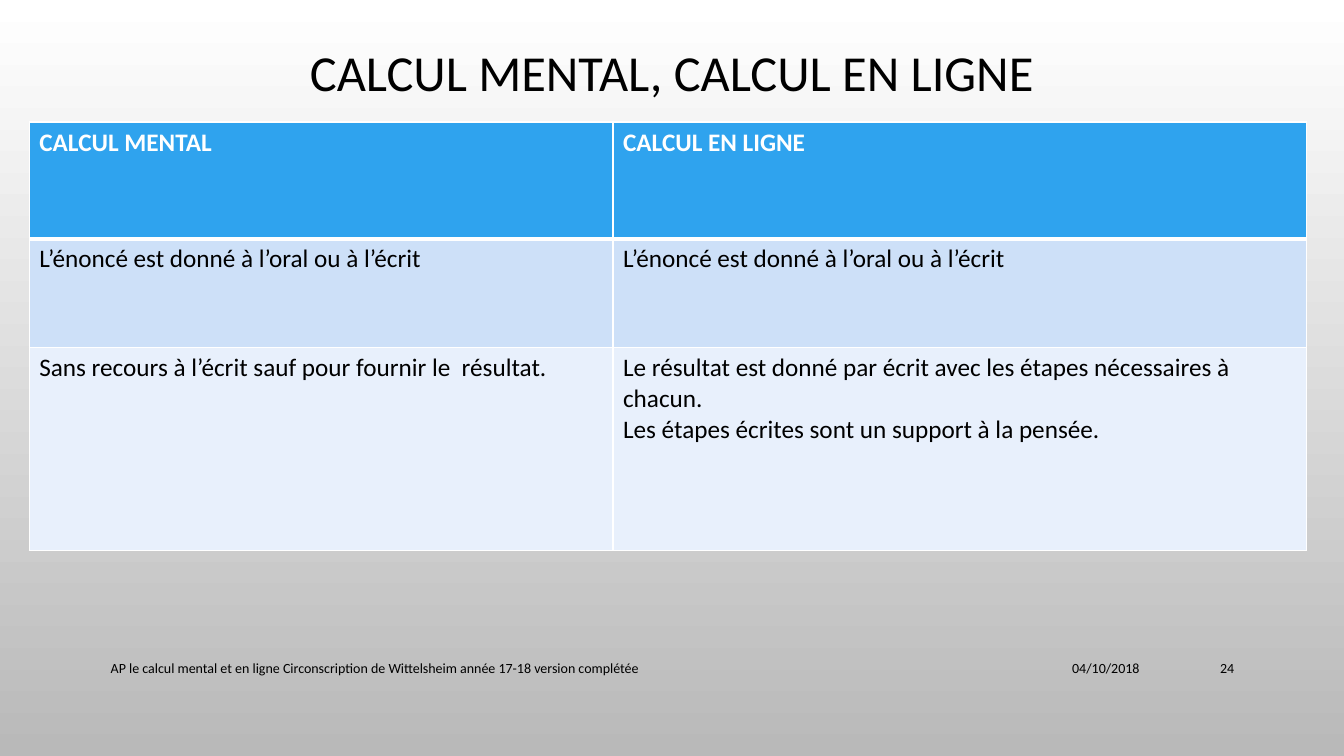
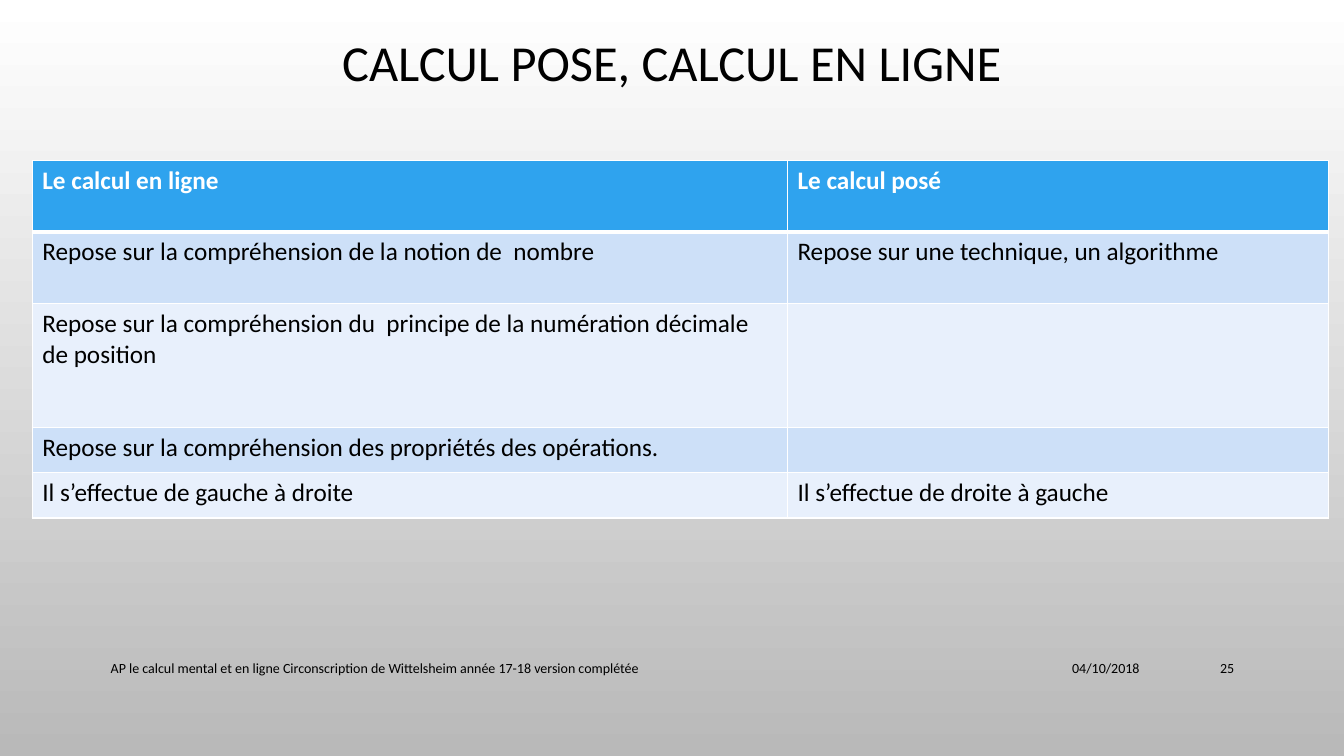
from pptx import Presentation
from pptx.dml.color import RGBColor
from pptx.enum.text import MSO_ANCHOR as Anchor, PP_ALIGN as Align
from pptx.oxml.ns import qn
from pptx.util import Inches, Pt
from lxml.etree import SubElement

FONT = "Calibri"
BLACK = RGBColor(0x00, 0x00, 0x00)
WHITE = RGBColor(0xFF, 0xFF, 0xFF)
GREY = RGBColor(0xB9, 0xB9, 0xB9)
HEADER_BLUE = RGBColor(0x2F, 0xA3, 0xEE)
BANDS = (RGBColor(0xCD, 0xE0, 0xF8), RGBColor(0xE8, 0xF0, 0xFC))

FOOTER = "AP le calcul mental et en ligne Circonscription de Wittelsheim année 17-18 version complétée"
DATE = "04/10/2018"

COMPARISONS = [
    {
        "title": "CALCUL MENTAL, CALCUL EN LIGNE",
        "title_box": (1, 0.38, 11.33, 0.73),
        "number": "24",
        "corner": (0.29, 1.21),
        "widths": (5.79, 6.88),
        "heights": (1.16, 1.08, 2.01),
        "rows": [
            ("CALCUL MENTAL", "CALCUL EN LIGNE"),
            ("L’énoncé est donné à l’oral ou à l’écrit",
             "L’énoncé est donné à l’oral ou à l’écrit"),
            ("Sans recours à l’écrit sauf pour fournir le  résultat.",
             "Le résultat est donné par écrit avec les étapes nécessaires à chacun.\n"
             "Les étapes écrites sont un support à la pensée."),
        ],
    },
    {
        "title": "CALCUL POSE, CALCUL EN LIGNE",
        "title_box": (1, 0.31, 11.33, 0.67),
        "number": "25",
        "corner": (0.32, 1.59),
        "widths": (7.49, 5.37),
        "heights": (0.71, 0.71, 1.23, 0.45, 0.45),
        "rows": [
            ("Le calcul en ligne", "Le calcul posé"),
            ("Repose sur la compréhension de la notion de  nombre",
             "Repose sur une technique, un algorithme"),
            ("Repose sur la compréhension du  principe de la numération décimale de position", ""),
            ("Repose sur la compréhension des propriétés des opérations.", ""),
            ("Il s’effectue de gauche à droite", "Il s’effectue de droite à gauche"),
        ],
    },
]


def write(frame, text, size, color=BLACK, bold=False, align=Align.LEFT, spacing=None):
    """Write each line of the text as a paragraph with one formatted run."""
    for index, line in enumerate(text.split("\n")):
        paragraph = frame.add_paragraph() if index else frame.paragraphs[0]
        paragraph.alignment = align
        paragraph.line_spacing = spacing
        run = paragraph.add_run()
        run.text = line
        run.font.name, run.font.size = FONT, Pt(size)
        run.font.bold, run.font.color.rgb = bold, color


def set_background(master):
    """Give the master a vertical fade from white to grey."""
    fill = master.background.fill
    fill.gradient()
    fill.gradient_angle = 270
    for stop, color in zip(fill.gradient_stops, (WHITE, GREY)):
        stop.color.rgb = color


def add_title(slide, text, box):
    """Place the title in its box."""
    title = slide.shapes.title
    title.left, title.top, title.width, title.height = map(Inches, box)
    title.text_frame.vertical_anchor = Anchor.MIDDLE
    write(title.text_frame, text, 36, align=Align.CENTER, spacing=0.9)


def add_footer(slide, number, top=6.43, height=0.4):
    """Place the footer, date and slide number on one line."""
    for text, left, width, align in (
        (FOOTER, 1, 7.3, Align.LEFT),
        (DATE, 8.4, 3, Align.RIGHT),
        (number, 11.5, 0.84, Align.RIGHT),
    ):
        box = slide.shapes.add_textbox(*map(Inches, (left, top, width, height)))
        box.text_frame.word_wrap = True
        box.text_frame.vertical_anchor = Anchor.MIDDLE
        write(box.text_frame, text, 10, align=align)


def set_borders(cell, top, bottom):
    """Draw white cell borders, with the top and bottom widths in points."""
    properties = cell._tc.get_or_add_tcPr()
    for side, width in (("L", 1), ("R", 1), ("T", top), ("B", bottom)):
        line = SubElement(properties, qn(f"a:ln{side}"), w=str(Pt(width)))
        SubElement(SubElement(line, qn("a:solidFill")), qn("a:srgbClr"), val=str(WHITE))


def add_comparison(slide, rows, corner, widths, heights):
    """Place the two-column comparison table with its banded rows."""
    box = (*corner, sum(widths), sum(heights))
    table = slide.shapes.add_table(len(heights), len(widths), *map(Inches, box)).table
    for column, width in zip(table.columns, widths):
        column.width = Inches(width)
    for r, (texts, height) in enumerate(zip(rows, heights)):
        table.rows[r].height = Inches(height)
        header = r == 0
        for c, text in enumerate(texts):
            cell = table.cell(r, c)
            set_borders(cell, 3 if r == 1 else 1, 3 if header else 1)
            cell.fill.solid()
            cell.fill.fore_color.rgb = HEADER_BLUE if header else BANDS[(r - 1) % 2]
            if text:
                write(cell.text_frame, text, 18, WHITE if header else BLACK, header)


def main():
    """Build and save the presentation."""
    prs = Presentation()
    prs.slide_width, prs.slide_height = Inches(13.33), Inches(7.5)
    set_background(prs.slide_master)
    title_only = prs.slide_layouts[5]
    for page in COMPARISONS:
        slide = prs.slides.add_slide(title_only)
        add_title(slide, page["title"], page["title_box"])
        add_comparison(slide, page["rows"], page["corner"], page["widths"], page["heights"])
        add_footer(slide, page["number"])
    prs.save("out.pptx")


if __name__ == "__main__":
    main()
